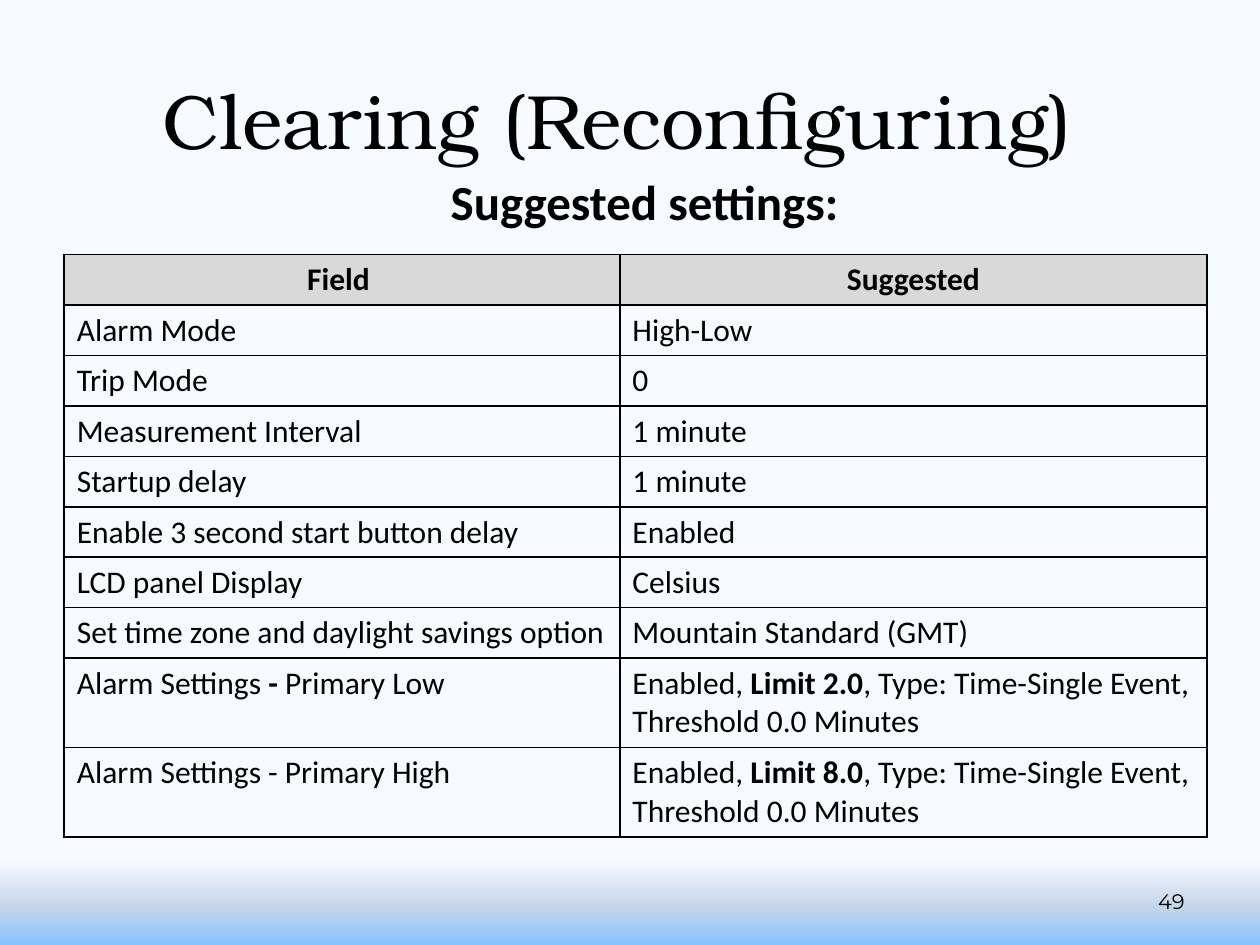
from lxml.etree import SubElement
from pptx import Presentation
from pptx.dml.color import RGBColor
from pptx.enum.text import MSO_ANCHOR, PP_ALIGN
from pptx.oxml.ns import qn
from pptx.util import Inches, Pt

BLACK = "000000"
HEADER_GRAY = "D9D9D9"
BACKGROUND_STOPS = [(0, "85C2FF"), (4, "C4D6EB"), (9, "F7FAFF")]
COLUMN_WIDTHS = [4.41, 4.66]
LIMIT_TYPE = ", Type: Time-Single Event, Threshold 0.0 Minutes"

# A cell is a plain string or a list of (text, bold) runs.
SETTINGS = [
    ("Alarm Mode", "High-Low"),
    ("Trip Mode", "0"),
    ("Measurement Interval", "1 minute"),
    ("Startup delay", "1 minute"),
    ("Enable 3 second start button delay", "Enabled"),
    ("LCD panel Display", "Celsius"),
    ("Set time zone and daylight savings option", "Mountain Standard (GMT)"),
    ([("Alarm Settings ", False), ("- ", True), ("Primary Low", False)],
     [("Enabled, ", False), ("Limit 2.0", True), (LIMIT_TYPE, False)]),
    ("Alarm Settings - Primary High",
     [("Enabled, ", False), ("Limit 8.0", True), (LIMIT_TYPE, False)]),
]


def color(hex_value):
    return RGBColor.from_string(hex_value)


def set_background(slide):
    """Fill the slide with a gradient that rises from the bottom edge."""
    fill = slide.background.fill
    fill.gradient()
    fill.gradient_angle = 90
    stops = next(slide.element.iter(qn("a:gsLst")))
    for default_stop in list(stops):
        stops.remove(default_stop)
    for percent, hex_value in BACKGROUND_STOPS:
        stop = SubElement(stops, qn("a:gs"), pos=str(percent * 1000))
        SubElement(stop, qn("a:srgbClr"), val=hex_value)


def write_runs(frame, runs, size, font, align):
    paragraph = frame.paragraphs[0]
    paragraph.alignment = align
    for text, bold in runs:
        run = paragraph.add_run()
        run.text = text
        run.font.size = Pt(size)
        run.font.name = font
        run.font.bold = bold
        run.font.color.rgb = color(BLACK)


def add_text(slide, box, text, size, font, align=PP_ALIGN.CENTER,
             anchor=MSO_ANCHOR.MIDDLE, bold=False):
    frame = slide.shapes.add_textbox(*map(Inches, box)).text_frame
    frame.word_wrap = True
    frame.vertical_anchor = anchor
    write_runs(frame, [(text, bold)], size, font, align)


def add_borders(cell):
    properties = cell._tc.get_or_add_tcPr()
    for side in ("lnL", "lnR", "lnT", "lnB"):
        line = SubElement(properties, qn(f"a:{side}"), w=str(Pt(1)))
        fill = SubElement(line, qn("a:solidFill"))
        SubElement(fill, qn("a:srgbClr"), val=BLACK)


def fill_cell(cell, content, is_header):
    add_borders(cell)
    if is_header:
        cell.fill.solid()
        cell.fill.fore_color.rgb = color(HEADER_GRAY)
    else:
        cell.fill.background()
    runs = [(content, is_header)] if isinstance(content, str) else content
    align = PP_ALIGN.CENTER if is_header else PP_ALIGN.LEFT
    write_runs(cell.text_frame, runs, 18, "Calibri", align)


def add_settings_table(slide):
    rows = [("Field ", "Suggested")] + SETTINGS
    heights = [0.4] * (len(rows) - 2) + [0.71] * 2
    table = slide.shapes.add_table(
        len(rows), len(COLUMN_WIDTHS), Inches(0.51), Inches(2.02),
        Inches(sum(COLUMN_WIDTHS)), Inches(sum(heights))).table
    table.first_row = False
    table.horz_banding = False
    for column, width in zip(table.columns, COLUMN_WIDTHS):
        column.width = Inches(width)
    for r, (contents, height) in enumerate(zip(rows, heights)):
        table.rows[r].height = Inches(height)
        for c, content in enumerate(contents):
            fill_cell(table.cell(r, c), content, is_header=r == 0)


def main():
    presentation = Presentation()
    presentation.slide_width = Inches(10)
    presentation.slide_height = Inches(7.5)
    slide = presentation.slides.add_slide(presentation.slide_layouts[6])
    set_background(slide)
    add_text(slide, (7.17, 6.95, 2.33, 0.4), "49", 12, "Montserrat",
             align=PP_ALIGN.RIGHT)
    add_text(slide, (0.5, 0.3, 9, 1.29), "Clearing (Reconfiguring) ", 44,
             "TeX Gyre Bonum")
    add_settings_table(slide)
    add_text(slide, (0.51, 1.31, 9.21, 0.57), "Suggested settings:", 28,
             "Calibri", anchor=MSO_ANCHOR.TOP, bold=True)
    presentation.save("out.pptx")


if __name__ == "__main__":
    main()
